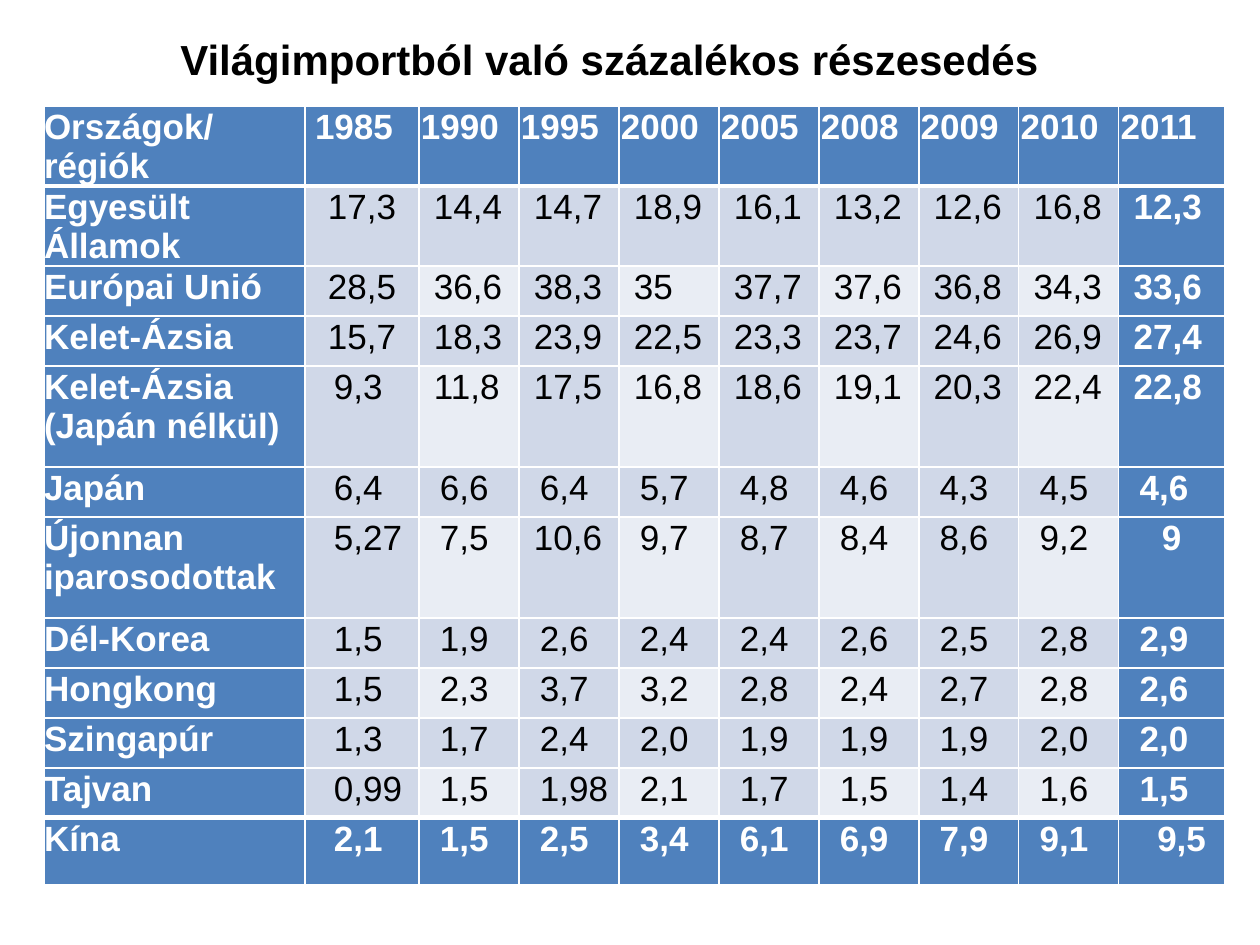
import pptx
import pptx.dml.color
import pptx.enum.text
import pptx.oxml
import pptx.oxml.ns
import pptx.util

PX = 914400 // 126
FONT = "Arial"
COLORS = {
    "accent": "4F81BD",
    "band": "D0D8E8",
    "light": "E9EDF4",
    "white": "FFFFFF",
    "black": "000000",
}
COLUMN_WIDTHS = [261, 114] + [100] * 7 + [106]
ROW_HEIGHTS = [50] * 4 + [101, 50, 101] + [50] * 4 + [67]
ROWS = [
    ("Országok/régiók", "1985 1990 1995 2000 2005 2008 2009 2010 2011"),
    ("Egyesült Államok", "17,3 14,4 14,7 18,9 16,1 13,2 12,6 16,8 12,3"),
    ("Európai Unió", "28,5 36,6 38,3 35 37,7 37,6 36,8 34,3 33,6"),
    ("Kelet-Ázsia", "15,7 18,3 23,9 22,5 23,3 23,7 24,6 26,9 27,4"),
    ("Kelet-Ázsia (Japán nélkül)", "9,3 11,8 17,5 16,8 18,6 19,1 20,3 22,4 22,8"),
    ("Japán", "6,4 6,6 6,4 5,7 4,8 4,6 4,3 4,5 4,6"),
    ("Újonnan iparosodottak", "5,27 7,5 10,6 9,7 8,7 8,4 8,6 9,2 9"),
    ("Dél-Korea", "1,5 1,9 2,6 2,4 2,4 2,6 2,5 2,8 2,9"),
    ("Hongkong", "1,5 2,3 3,7 3,2 2,8 2,4 2,7 2,8 2,6"),
    ("Szingapúr", "1,3 1,7 2,4 2,0 1,9 1,9 1,9 2,0 2,0"),
    ("Tajvan", "0,99 1,5 1,98 2,1 1,7 1,5 1,4 1,6 1,5"),
    ("Kína", "2,1 1,5 2,5 3,4 6,1 6,9 7,9 9,1 9,5"),
]
LAST_ROW = len(ROWS) - 1
LAST_COLUMN = len(COLUMN_WIDTHS) - 1
CENTRED_INDENTS = {(6, LAST_COLUMN): 0, (LAST_ROW, LAST_COLUMN): 20}


def px(length):
    return pptx.util.Emu(length * PX)


def rgb(name):
    return pptx.dml.color.RGBColor.from_string(COLORS[name])


def set_font(paragraph, size, color, bold):
    font = paragraph.font
    font.name = FONT
    font.size = pptx.util.Pt(size)
    font.bold = bold
    font.color.rgb = rgb(color)


def set_borders(cell, row, column):
    widths = {
        "lnL": 1,
        "lnR": 1,
        "lnT": 3 if row in (1, LAST_ROW) else 1,
        "lnB": 3 if row in (0, LAST_ROW - 1) else 1,
    }
    properties = cell._tc.get_or_add_tcPr()
    for side, width in widths.items():
        properties.append(pptx.oxml.parse_xml(
            f'<a:{side} {pptx.oxml.ns.nsdecls("a")} w="{pptx.util.Pt(width)}">'
            f'<a:solidFill><a:srgbClr val="{COLORS["white"]}"/></a:solidFill>'
            f'</a:{side}>'
        ))


def text_indent(text, row, column):
    if column == 0:
        return 0
    if row == 0:
        base = 2
    else:
        base = 15 if len(text.split(",")[0]) == 2 else 21
    return base + (8 if column == 1 else 0)


def fill_cell(cell, text, row, column):
    emphasized = row in (0, LAST_ROW) or column in (0, LAST_COLUMN)
    light = row % 2 == 0 and column % 2 == 0
    set_borders(cell, row, column)
    cell.fill.solid()
    cell.fill.fore_color.rgb = rgb("accent" if emphasized else "light" if light else "band")
    cell.margin_left = cell.margin_right = cell.margin_bottom = 0
    cell.margin_top = px(2)
    cell.text = text
    paragraph = cell.text_frame.paragraphs[0]
    indent = text_indent(text, row, column)
    if (row, column) in CENTRED_INDENTS:
        paragraph.alignment = pptx.enum.text.PP_ALIGN.CENTER
        indent = CENTRED_INDENTS[row, column]
    properties = paragraph._p.get_or_add_pPr()
    properties.set("marL", str(px(indent)))
    properties.set("indent", "0")
    set_font(paragraph, 20, "white" if emphasized else "black", emphasized)


def add_import_table(slide, left, top, width, height):
    shape = slide.shapes.add_table(
        len(ROWS), len(COLUMN_WIDTHS), px(left), px(top), px(width), px(height))
    table = shape.table
    table.horz_banding = False
    for column, column_width in zip(table.columns, COLUMN_WIDTHS):
        column.width = px(column_width)
    for row, row_height in zip(table.rows, ROW_HEIGHTS):
        row.height = px(row_height)
    for row, (region, values) in enumerate(ROWS):
        for column, text in enumerate([region, *values.split()]):
            fill_cell(table.cell(row, column), text, row, column)


def add_title(slide, left, top, width, height):
    shape = slide.shapes.add_textbox(px(left), px(top), px(width), px(height))
    shape.text_frame.word_wrap = True
    shape.text_frame.text = "Világimportból való százalékos részesedés"
    set_font(shape.text_frame.paragraphs[0], 24, "black", True)


def main():
    presentation = pptx.Presentation()
    presentation.slide_width = pptx.util.Inches(10)
    presentation.slide_height = pptx.util.Inches(7.5)
    slide = presentation.slides.add_slide(presentation.slide_layouts[6])
    add_import_table(slide, 44, 106, sum(COLUMN_WIDTHS), sum(ROW_HEIGHTS))
    add_title(slide, 168, 27, 1038, 63)
    presentation.save("out.pptx")


if __name__ == "__main__":
    main()
